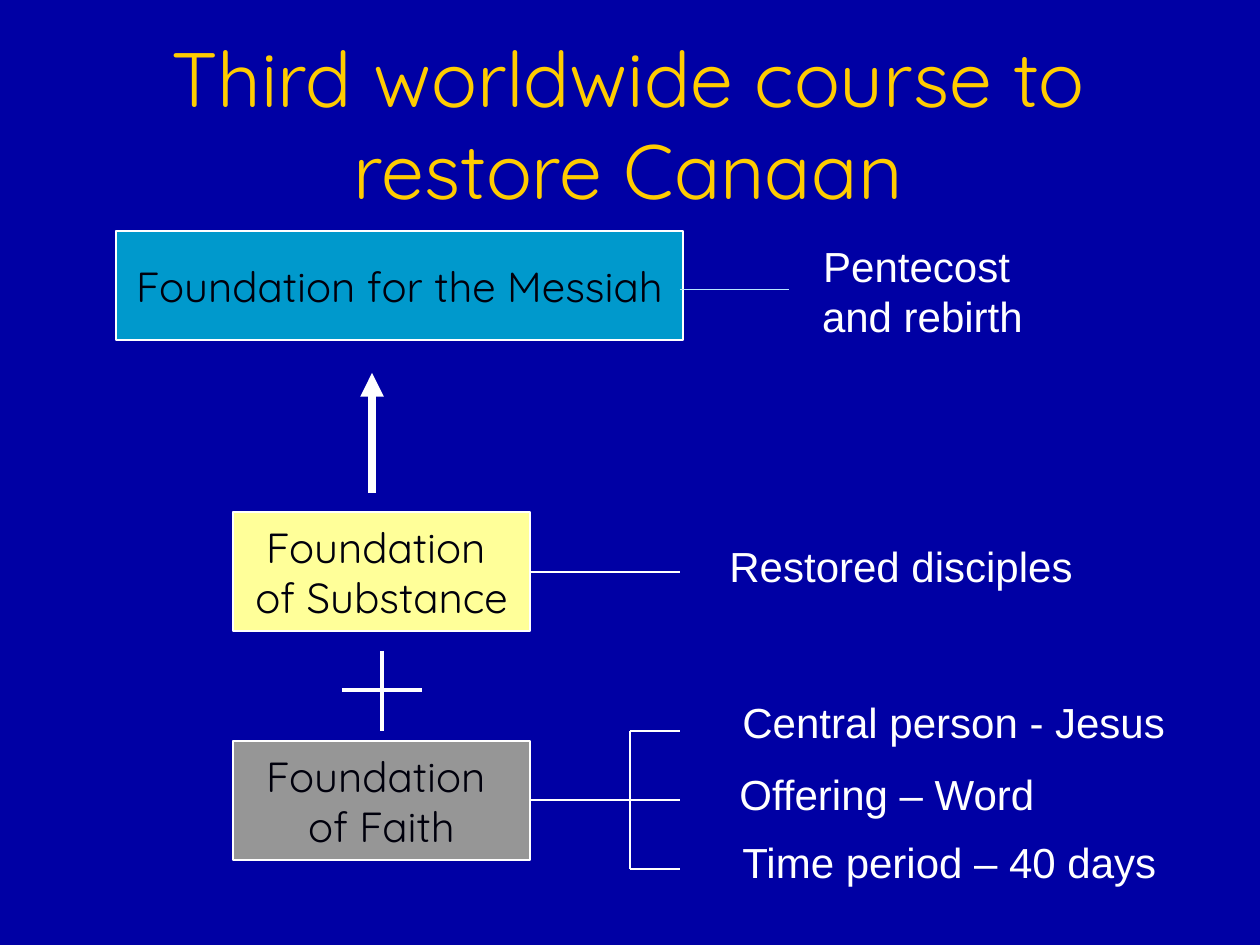
from lxml.etree import SubElement
from pptx import Presentation
from pptx.dml.color import RGBColor
from pptx.enum.shapes import MSO_CONNECTOR, MSO_SHAPE
from pptx.enum.text import MSO_ANCHOR, MSO_AUTO_SIZE, PP_ALIGN
from pptx.oxml.ns import qn
from pptx.util import Pt

PX = 914400 / 126
WHITE = "FFFFFF"
rgb = RGBColor.from_string


def emu(*nums):
    return [round(n * PX) for n in nums]


def write(frame, text, face, size, tint, align):
    frame.text = text
    frame.vertical_anchor = MSO_ANCHOR.MIDDLE
    for para in frame.paragraphs:
        para.alignment = align
        for run in para.runs:
            look = {"name": face, "size": Pt(size), "bold": False}
            for key, val in look.items():
                setattr(run.font, key, val)
            run.font.color.rgb = rgb(tint)


deck = Presentation()
deck.slide_width, deck.slide_height = emu(1260, 945)
slide = deck.slides.add_slide(deck.slide_layouts[5])
slide.background.fill.solid()
slide.background.fill.fore_color.rgb = rgb("0000A4")
shapes = slide.shapes

# Title with a soft shadow
title = shapes.title
title.left, title.top, title.width, title.height = emu(42, 31, 1173, 183)
frame = title.text_frame
write(frame, "Third worldwide course to restore Canaan",
      "Quicksand", 44, "FFCC00", PP_ALIGN.CENTER)
frame.word_wrap = True
frame.auto_size = MSO_AUTO_SIZE.NONE
props = frame.paragraphs[0].runs[0].font.fill._xPr
effect = SubElement(props, qn("a:effectLst"))
props.find(qn("a:solidFill")).addnext(effect)
shade = SubElement(effect, qn("a:outerShdw"), blurRad="38100",
                   dist="38100", dir="2700000", algn="tl")
SubElement(shade, qn("a:srgbClr"), val="000000")

# Foundation boxes: left, top, width, height, fill, text
boxes = [
    (233, 741, 297, 119, "969696", "Foundation \nof Faith"),
    (233, 512, 297, 119, "FFFF99", "Foundation \nof Substance"),
    (116, 231, 567, 109, "0099CC", "Foundation for the Messiah"),
]
for *area, fill, text in boxes:
    box = shapes.add_shape(MSO_SHAPE.RECTANGLE, *emu(*area))
    box.shadow.inherit = False
    box.fill.solid()
    box.fill.fore_color.rgb = rgb(fill)
    box.line.color.rgb = rgb(WHITE)
    box.line.width = Pt(0.75)
    write(box.text_frame, text, "Quicksand", 24, "00000C", PP_ALIGN.CENTER)
    box.text_frame.word_wrap = False

# Lines: start, end, weight, colour, arrowhead at the start
lines = [
    (372, 373, 372, 493, 4.5, WHITE, True),       # arrow up
    (342, 690, 422, 690, 2.25, WHITE, False),     # plus sign
    (382, 651, 382, 731, 2.25, WHITE, False),
    (530, 800, 680, 800, 0.75, WHITE, False),     # bracket
    (630, 731, 630, 869, 0.75, WHITE, False),
    (630, 869, 680, 869, 0.75, WHITE, False),
    (630, 731, 680, 731, 0.75, WHITE, False),
    (530, 572, 680, 572, 0.75, WHITE, False),     # links to labels
    (680, 289, 789, 289, 0.25, "B7E7FF", False),
]
for *ends, weight, tint, arrow in lines:
    line = shapes.add_connector(MSO_CONNECTOR.STRAIGHT, *emu(*ends))
    line.line.color.rgb = rgb(tint)
    line.line.width = Pt(weight)
    SubElement(line._element.spPr, qn("a:effectLst"))
    if arrow:
        SubElement(line.line._get_or_add_ln(), qn("a:headEnd"), type="triangle")

# Labels: left, top, width, height, alignment, text
labels = [
    (727, 762, 334, 63, PP_ALIGN.LEFT, "Offering – Word"),
    (730, 690, 449, 63, PP_ALIGN.LEFT, "Central person - Jesus"),
    (730, 830, 441, 63, PP_ALIGN.LEFT, "Time period – 40 days"),
    (717, 534, 369, 63, PP_ALIGN.LEFT, "Restored disciples"),
    (809, 234, 227, 113, PP_ALIGN.CENTER, "Pentecost \nand rebirth"),
]
for *area, align, text in labels:
    frame = shapes.add_textbox(*emu(*area)).text_frame
    write(frame, text, "Arial", 24, WHITE, align)
    frame.vertical_anchor = MSO_ANCHOR.TOP
    frame.word_wrap = False
    frame.auto_size = MSO_AUTO_SIZE.SHAPE_TO_FIT_TEXT

deck.save("out.pptx")
